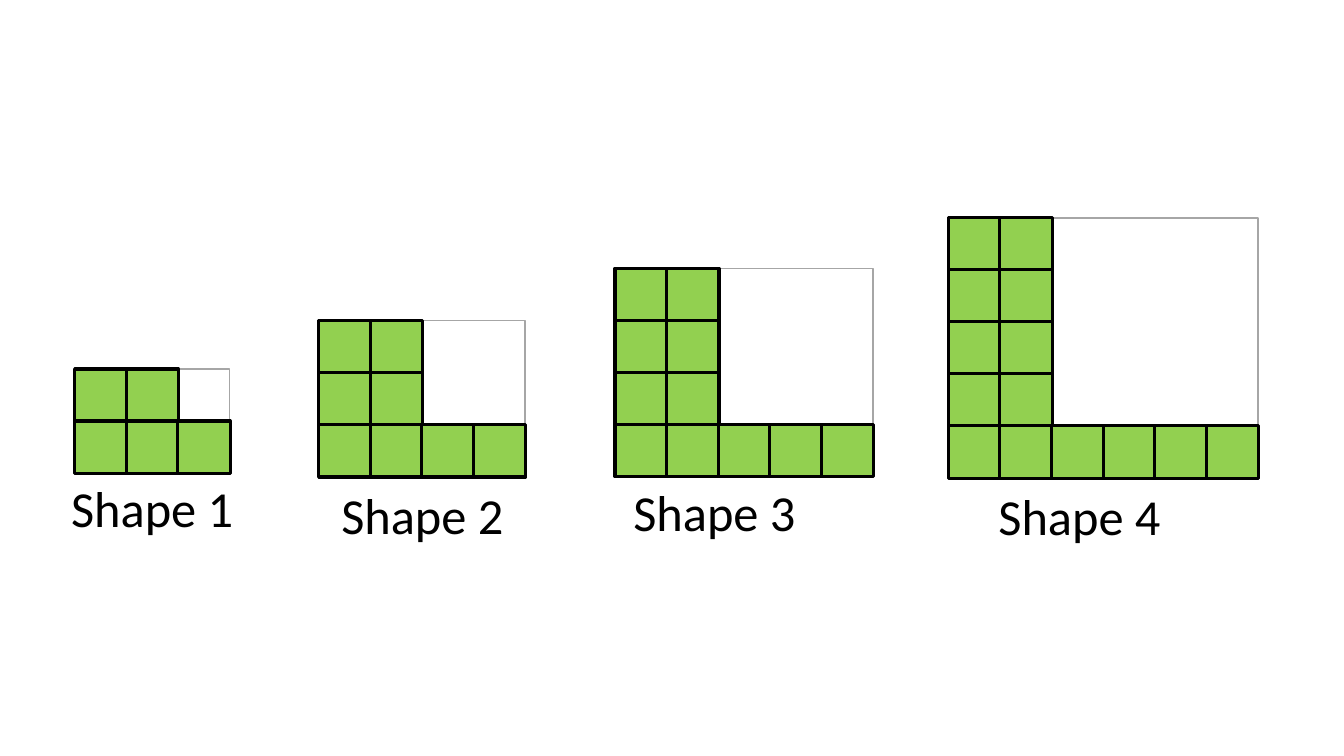
from dataclasses import dataclass

from pptx import Presentation
from pptx.dml.color import RGBColor
from pptx.enum.shapes import MSO_SHAPE
from pptx.enum.text import MSO_AUTO_SIZE, PP_ALIGN
from pptx.util import Cm, Pt

RECTANGLE = MSO_SHAPE.RECTANGLE
CENTER = PP_ALIGN.CENTER
GROW = MSO_AUTO_SIZE.SHAPE_TO_FIT_TEXT
BLANK_LAYOUT = 6

# Lengths in centimetres
TILE = 1.32
COLUMN_STEP = 1.3
ROW_STEP = 1.31
LABEL_WIDTH, LABEL_HEIGHT = 7.67, 1.5
TOWER_COLUMNS = 2

# Left and top of the tiles, then left and top of the label
PATTERNS = [
    (1.88, 9.3, 0, 11.89),
    (8.03, 8.08, 6.81, 12.07),
    (15.5, 6.76, 14.17, 12.01),
    (23.9, 5.49, 23.37, 12.09),
]


@dataclass(frozen=True)
class Theme:
    tile: RGBColor = RGBColor(0x92, 0xD0, 0x50)
    outline: RGBColor = RGBColor(0, 0, 0)
    frame: RGBColor = RGBColor(0xA6, 0xA6, 0xA6)
    text: RGBColor = RGBColor(0, 0, 0)
    font: str = "Calibri"
    label_size: float = 36
    outline_width: float = 2.25
    frame_width: float = 1


class PatternSlide:
    def __init__(self, slide, theme):
        self.slide = slide
        self.theme = theme

    def rectangle(self, left, top, width, height, line_format):
        shape = self.slide.shapes.add_shape(
            RECTANGLE, Cm(left), Cm(top), Cm(width), Cm(height))
        shape.shadow.inherit = False
        shape.line.color.rgb = line_format["color"]
        shape.line.width = Pt(line_format["width"])
        return shape

    def frame(self, left, top, columns, rows):
        shape = self.rectangle(
            left, top, columns * COLUMN_STEP, rows * ROW_STEP,
            {"color": self.theme.frame, "width": self.theme.frame_width})
        shape.fill.background()

    def tile(self, left, top):
        shape = self.rectangle(
            left, top, TILE, TILE,
            {"color": self.theme.outline, "width": self.theme.outline_width})
        shape.fill.solid()
        shape.fill.fore_color.rgb = self.theme.tile

    def tiles(self, left, top, columns, rows):
        """Draw a two-column tower standing on a full bottom row."""
        for row in range(rows):
            is_bottom = row == rows - 1
            for column in range(columns if is_bottom else TOWER_COLUMNS):
                self.tile(left + column * COLUMN_STEP, top + row * ROW_STEP)

    def label(self, text, left, top):
        box = self.slide.shapes.add_textbox(
            Cm(left), Cm(top), Cm(LABEL_WIDTH), Cm(LABEL_HEIGHT))
        box.text_frame.word_wrap = True
        box.text_frame.auto_size = GROW
        paragraph = box.text_frame.paragraphs[0]
        paragraph.alignment = CENTER
        run = paragraph.add_run()
        run.text = text
        font_format = {"name": self.theme.font, "size": Pt(self.theme.label_size)}
        for attribute, value in font_format.items():
            setattr(run.font, attribute, value)
        run.font.color.rgb = self.theme.text


def main():
    presentation = Presentation()
    presentation.slide_width = Cm(33.87)
    presentation.slide_height = Cm(19.05)
    slide = presentation.slides.add_slide(presentation.slide_layouts[BLANK_LAYOUT])
    pattern_slide = PatternSlide(slide, Theme())
    for number, (left, top, label_left, label_top) in enumerate(PATTERNS, start=1):
        columns, rows = number + 2, number + 1
        pattern_slide.frame(left, top, columns, rows)
        pattern_slide.tiles(left, top, columns, rows)
        pattern_slide.label(f"Shape {number}", label_left, label_top)
    presentation.save("out.pptx")


if __name__ == "__main__":
    main()
